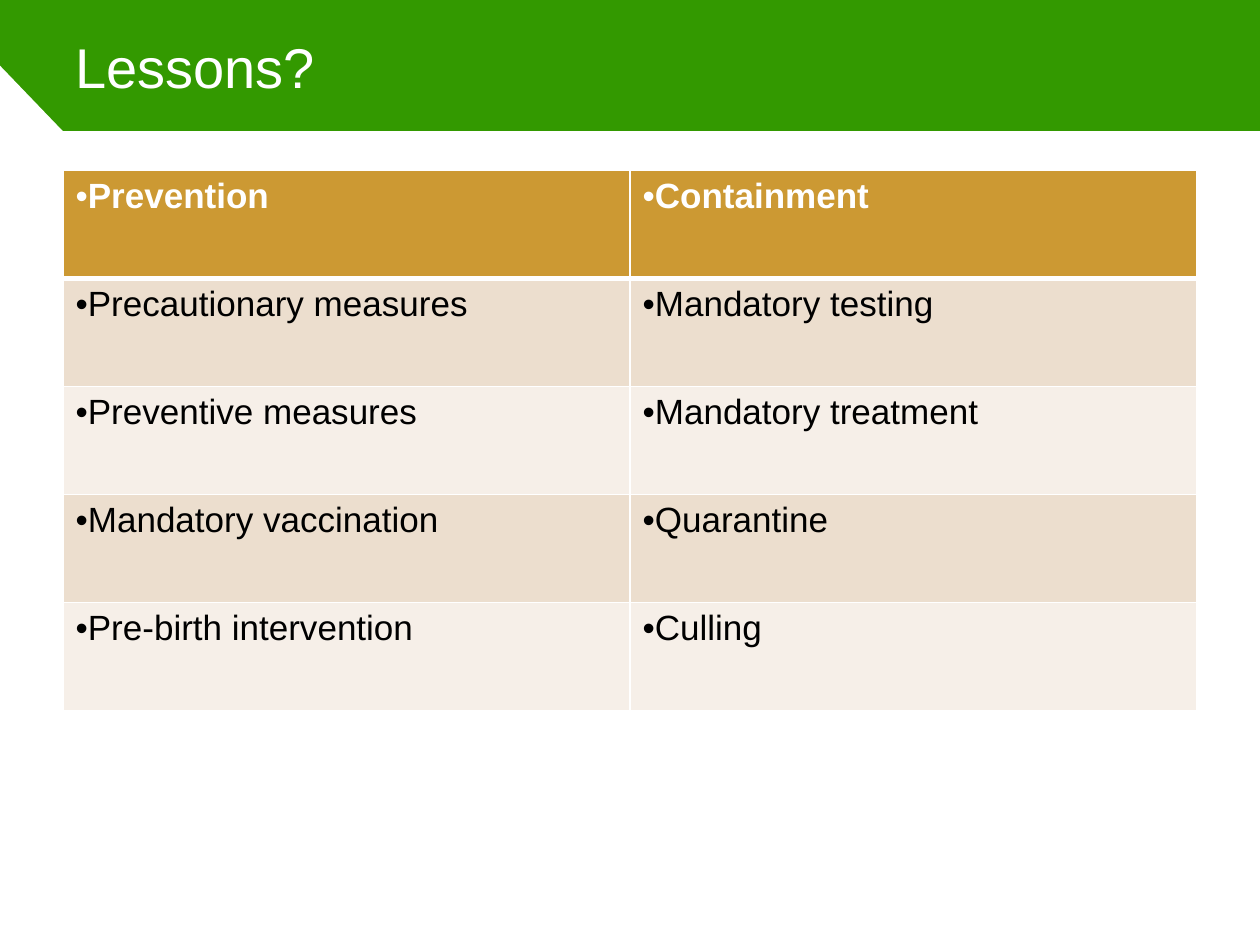
from lxml.etree import SubElement
from pptx import Presentation
from pptx.dml.color import RGBColor
from pptx.enum.text import MSO_ANCHOR
from pptx.oxml.ns import qn
from pptx.util import Pt

SLIDE_WIDTH, SLIDE_HEIGHT = 720, 540
MARGIN = 36
BANNER_HEIGHT = 75
TABLE_TOP = 97.5
ROW_HEIGHT = 61.7

GREEN, WHITE, BLACK = "339900", "FFFFFF", "000000"
HEADER_FILL = "CC9933"
BAND_FILLS = ["ECDECE", "F6EFE8"]

TITLE_FORMAT = {"name": "Arial", "size": Pt(32), "bold": False}
CELL_FORMAT = {"name": "Arial", "size": Pt(20), "bold": False}
HEADER_FORMAT = CELL_FORMAT | {"bold": True}

MEASURES = [
    ("Prevention", "Containment"),
    ("Precautionary measures", "Mandatory testing"),
    ("Preventive measures", "Mandatory treatment"),
    ("Mandatory vaccination", "Quarantine"),
    ("Pre-birth intervention", "Culling"),
]


def paint(fill, color):
    fill.solid()
    fill.fore_color.rgb = RGBColor.from_string(color)


def write(paragraph, text, font_format, color):
    run = paragraph.add_run()
    run.text = text
    for attribute, value in font_format.items():
        setattr(run.font, attribute, value)
    run.font.color.rgb = RGBColor.from_string(color)


def add_body_panel(slide):
    """White area below the banner, with its top left corner cut off."""
    builder = slide.shapes.build_freeform(Pt(MARGIN), Pt(BANNER_HEIGHT))
    builder.add_line_segments([
        (Pt(0), Pt(BANNER_HEIGHT / 2)),
        (Pt(0), Pt(SLIDE_HEIGHT)),
        (Pt(SLIDE_WIDTH), Pt(SLIDE_HEIGHT)),
        (Pt(SLIDE_WIDTH), Pt(BANNER_HEIGHT)),
    ], close=True)
    panel = builder.convert_to_shape()
    panel.shadow.inherit = False
    paint(panel.fill, WHITE)
    panel.line.fill.background()


def add_title(slide, text):
    title = slide.shapes.add_textbox(
        Pt(MARGIN), Pt(0), Pt(SLIDE_WIDTH - 2 * MARGIN), Pt(BANNER_HEIGHT))
    frame = title.text_frame
    frame.word_wrap = True
    frame.vertical_anchor = MSO_ANCHOR.MIDDLE
    write(frame.paragraphs[0], text, TITLE_FORMAT, WHITE)


def add_borders(cell, widths):
    properties = cell._tc.get_or_add_tcPr()
    for side, width in widths.items():
        border = SubElement(properties, qn(f"a:ln{side}"), w=str(Pt(width)))
        fill = SubElement(border, qn("a:solidFill"))
        SubElement(fill, qn("a:srgbClr"), val=WHITE)


def add_bullet(paragraph):
    properties = paragraph._p.get_or_add_pPr()
    SubElement(properties, qn("a:buFont"), typeface="Arial")
    SubElement(properties, qn("a:buChar"), char="•")


def add_measures_table(slide):
    row_count, column_count = len(MEASURES), len(MEASURES[0])
    table = slide.shapes.add_table(
        row_count, column_count, Pt(MARGIN), Pt(TABLE_TOP),
        Pt(SLIDE_WIDTH - 2 * MARGIN), Pt(ROW_HEIGHT * row_count)).table
    for row, measures in enumerate(MEASURES):
        is_header = row == 0
        fill = HEADER_FILL if is_header else BAND_FILLS[(row - 1) % 2]
        font_format = HEADER_FORMAT if is_header else CELL_FORMAT
        color = WHITE if is_header else BLACK
        widths = {"L": 1, "R": 1, "T": 3 if row == 1 else 1, "B": 3 if is_header else 1}
        for column, measure in enumerate(measures):
            cell = table.cell(row, column)
            add_borders(cell, widths)
            paint(cell.fill, fill)
            paragraph = cell.text_frame.paragraphs[0]
            add_bullet(paragraph)
            write(paragraph, measure, font_format, color)


def main():
    presentation = Presentation()
    presentation.slide_width = Pt(SLIDE_WIDTH)
    presentation.slide_height = Pt(SLIDE_HEIGHT)
    slide = presentation.slides.add_slide(presentation.slide_layouts[6])
    paint(slide.background.fill, GREEN)
    add_body_panel(slide)
    add_title(slide, "Lessons?")
    add_measures_table(slide)
    presentation.save("out.pptx")


if __name__ == "__main__":
    main()
